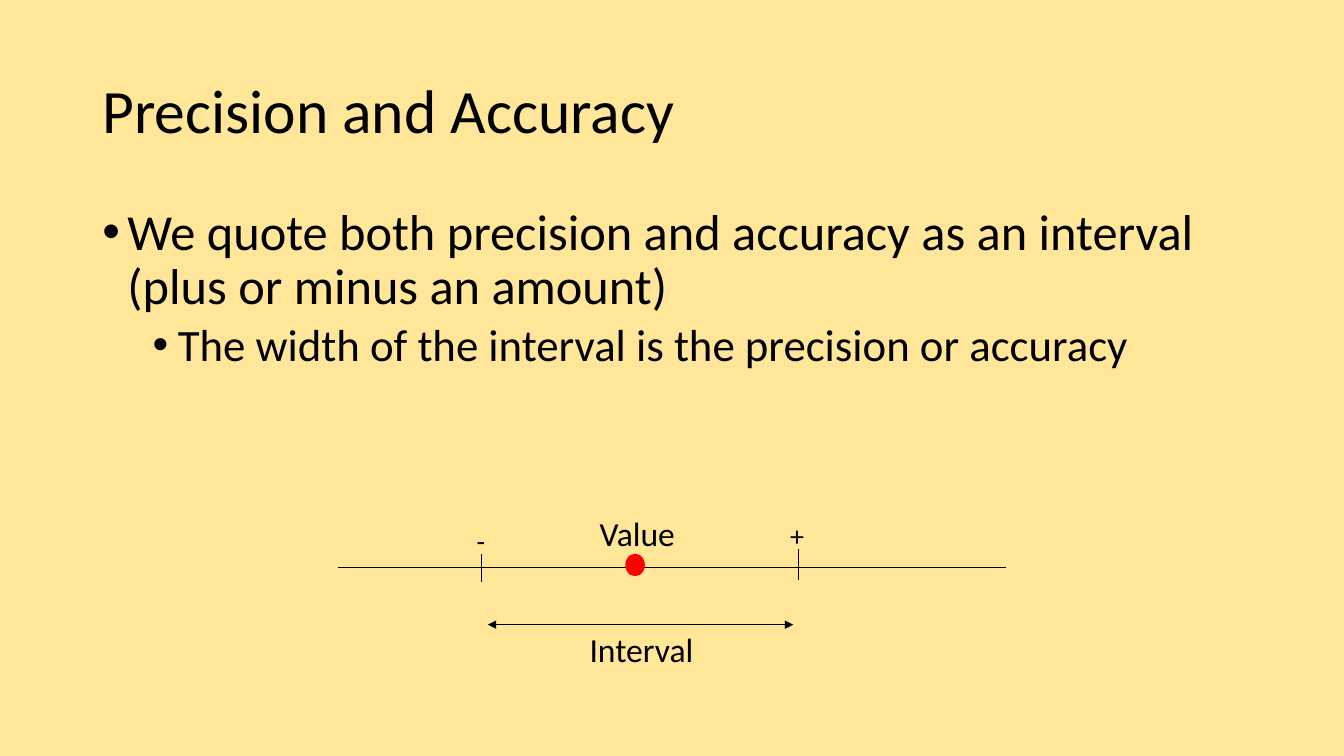
"""Build the slide on precision and accuracy, with an interval marked on a number line."""
from lxml.etree import SubElement
from pptx import Presentation
from pptx.dml.color import RGBColor
from pptx.enum.shapes import MSO_CONNECTOR, MSO_SHAPE
from pptx.enum.text import MSO_ANCHOR
from pptx.oxml.ns import qn
from pptx.util import Pt


def rgb(value):
    return RGBColor.from_string(value)


def add_text(left, top, width, height, lines, spacing, after=0):
    box = slide.shapes.add_textbox(Pt(left), Pt(top), Pt(width), Pt(height))
    frame = box.text_frame
    frame.word_wrap = True
    frame.text = "\n".join(text for text, size in lines)
    for paragraph, (text, size) in zip(frame.paragraphs, lines):
        paragraph.line_spacing = spacing
        paragraph.space_after = Pt(after)
        font = paragraph.runs[0].font
        font.name = "Calibri"
        font.size = Pt(size)
        font.color.rgb = rgb("000000")
    return frame


prs = Presentation()
prs.slide_width = Pt(960)
prs.slide_height = Pt(540)
slide = prs.slides.add_slide(prs.slide_layouts[6])
slide.background.fill.solid()
slide.background.fill.fore_color.rgb = rgb("FFE699")

title = add_text(66, 28.8, 828, 104.4, [("Precision and Accuracy", 44)], 0.9)
title.vertical_anchor = MSO_ANCHOR.MIDDLE

points = add_text(66, 144, 828, 342.7, [
    ("We quote both precision and accuracy as an interval (plus or minus an amount)", 36),
    ("The width of the interval is the precision or accuracy", 32),
], 0.9)
for level, (point, before, indent) in enumerate(zip(points.paragraphs, (10, 5), (18, 54))):
    point.level = level
    point.space_before = Pt(before)
    properties = point._p.get_or_add_pPr()
    properties.set("marL", str(Pt(indent)))
    properties.set("indent", str(Pt(-18)))
    SubElement(properties, qn("a:buFont"), typeface="Arial")
    SubElement(properties, qn("a:buChar"), char="•")

for label, size, left, top, width, height in [
    ("Value", 24, 421.2, 360.7, 143.3, 39.6),
    ("+", 20, 557.3, 365, 44.6, 35.3),
    ("-", 20, 333.4, 368.6, 41.8, 35.3),
    ("Interval", 24, 414, 443.5, 90, 47.5),
]:
    caption = add_text(left, top, width, height, [(label, size)], 1.07, 8)
    caption.word_wrap = label != "Interval"

for x1, y1, x2, y2, arrows in [
    (241.2, 405.2, 718.6, 405.2, False),
    (343.6, 396, 343.6, 415.4, False),
    (570.2, 392.4, 570.2, 414, False),
    (348.5, 446.2, 566.6, 446.2, True),
]:
    rule = slide.shapes.add_connector(MSO_CONNECTOR.STRAIGHT, Pt(x1), Pt(y1), Pt(x2), Pt(y2))
    rule.line.width = Pt(0.5)
    rule.line.color.rgb = rgb("000000")
    SubElement(rule._element.spPr, qn("a:effectLst"))
    if arrows:
        for end in ("a:headEnd", "a:tailEnd"):
            SubElement(rule.line._get_or_add_ln(), qn(end), type="triangle")

value_dot = slide.shapes.add_shape(MSO_SHAPE.OVAL, Pt(447.1), Pt(396), Pt(13), Pt(15.1))
value_dot.shadow.inherit = False
value_dot.fill.solid()
value_dot.fill.fore_color.rgb = rgb("FF0000")
value_dot.line.color.rgb = rgb("FF0000")
value_dot.line.width = Pt(1)

prs.save("out.pptx")
